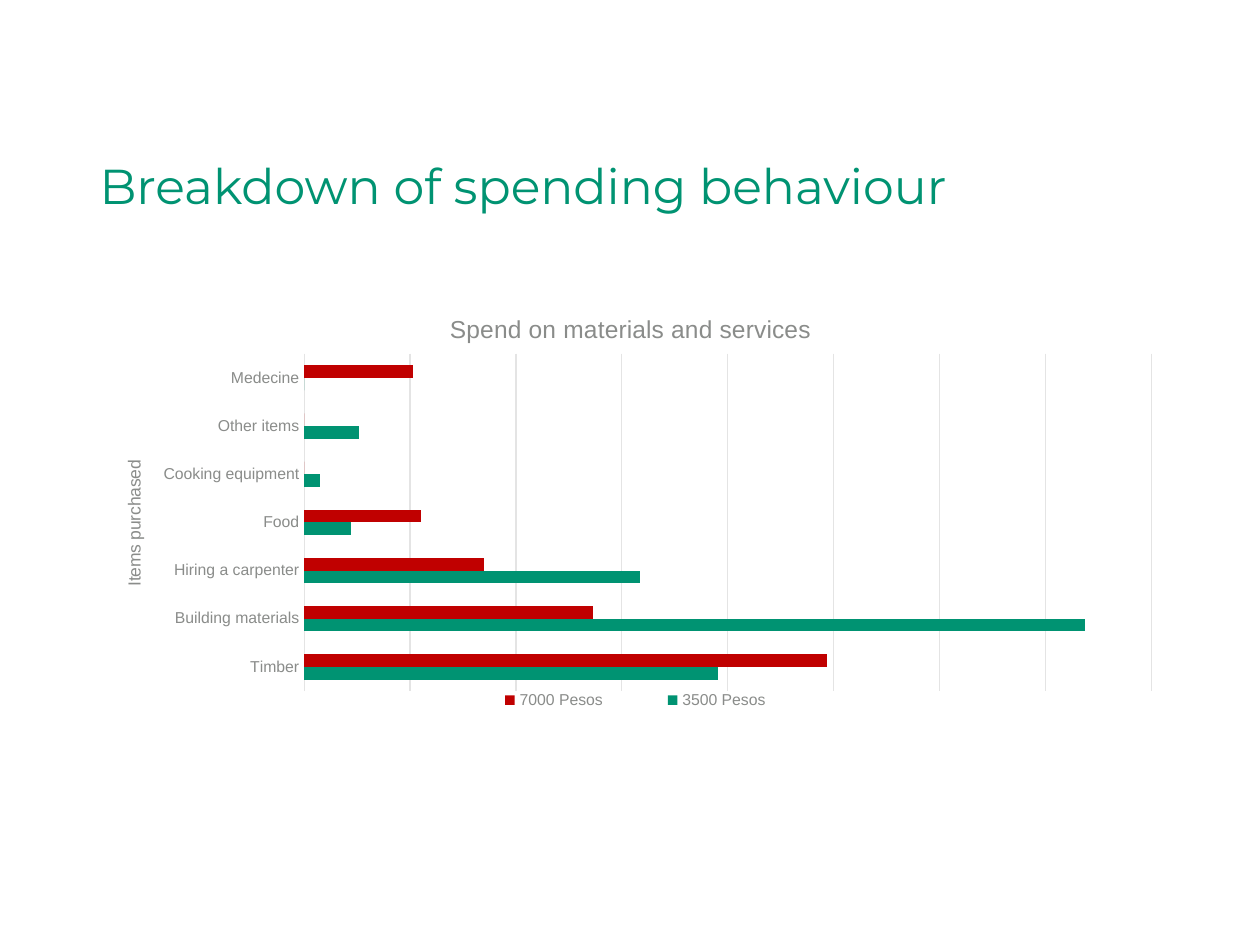
import pptx
import pptx.chart.data
import pptx.dml.color
import pptx.enum.chart
import pptx.enum.text
import pptx.oxml
import pptx.oxml.ns
import pptx.util
from dataclasses import dataclass


@dataclass(frozen=True)
class Theme:
    green: str = "009372"
    red: str = "C00000"
    grey: str = "8A8C8A"
    rule: str = "E4E4E4"
    heading_font: str = "Montserrat"
    chart_font: str = "Arial"
    heading_size: int = 28
    chart_title_size: int = 14
    axis_title_size: int = 10
    label_size: int = 9


THEME = Theme()
WIDTH, HEIGHT = pptx.util.Inches(10), pptx.util.Inches(7.5)
MARGIN = 0.069  # share of the slide's width
GRID_STEP, GRID_COLUMNS = 13.56, 8

ITEMS = ["Timber", "Building materials", "Hiring a carpenter", "Food",
         "Cooking equipment", "Other items", "Medecine"]
SPENDING = [
    ("3500 Pesos", [53, 100, 43, 6, 2, 7, 0], THEME.green),
    ("7000 Pesos", [67, 37, 23, 15, 0, 0, 14], THEME.red),
]


def rgb(value):
    return pptx.dml.color.RGBColor.from_string(value)


def style_font(font, name, size, color):
    font.name = name
    font.size = pptx.util.Pt(size)
    font.bold = False
    font.color.rgb = rgb(color)


def style_rule(line):
    line.color.rgb = rgb(THEME.rule)
    line.width = pptx.util.Pt(0.75)


def band(top, height):
    """Left, top, width and height of a band between the side margins."""
    return (int(WIDTH * MARGIN), int(HEIGHT * top),
            int(WIDTH * (1 - 2 * MARGIN)), int(HEIGHT * height))


def place(element, after, inner=False, **shares):
    """Fix a chart part's position, in shares of the chart's size."""
    for old in element.findall(pptx.oxml.ns.qn("c:layout")):
        element.remove(old)
    target = '<c:layoutTarget val="inner"/>' if inner else ""
    modes = "".join(f'<c:{key}Mode val="edge"/>' for key in "xy")
    sizes = "".join(f'<c:{key} val="{share}"/>' for key, share in shares.items())
    layout = pptx.oxml.parse_xml(
        f'<c:layout {pptx.oxml.ns.nsdecls("c")}><c:manualLayout>'
        f"{target}{modes}{sizes}</c:manualLayout></c:layout>")
    before = element.find(pptx.oxml.ns.qn(after)) if after else None
    if before is None:
        element.insert(0, layout)
    else:
        before.addnext(layout)


def add_heading(slide, text):
    heading = slide.shapes.title
    heading.left, heading.top, heading.width, heading.height = band(0.165, 0.115)
    frame = heading.text_frame
    frame.text = text
    frame.word_wrap = True
    frame.vertical_anchor = pptx.enum.text.MSO_ANCHOR.TOP
    paragraph = frame.paragraphs[0]
    paragraph.alignment = pptx.enum.text.PP_ALIGN.LEFT
    paragraph.line_spacing = 0.9
    style_font(paragraph.font, THEME.heading_font, THEME.heading_size, THEME.green)


def add_title(owner, text, size, x, y):
    """Title a chart or an axis."""
    owner.has_title = True
    title = owner.chart_title if hasattr(owner, "chart_title") else owner.axis_title
    title.text_frame.text = text
    style_font(title.text_frame.paragraphs[0].font, THEME.chart_font, size, THEME.grey)
    place(title.text_frame._txBody.getparent().getparent(), "c:tx", x=x, y=y)


def style_axes(chart):
    items, amounts = chart.category_axis, chart.value_axis
    items.major_tick_mark = pptx.enum.chart.XL_TICK_MARK.NONE
    style_font(items.tick_labels.font, THEME.chart_font, THEME.label_size, THEME.grey)
    style_rule(items.format.line)
    amounts.visible = False
    amounts.minimum_scale = 0
    amounts.maximum_scale = GRID_STEP * GRID_COLUMNS
    amounts.major_unit = GRID_STEP
    amounts.has_major_gridlines = True
    style_rule(amounts.major_gridlines.format.line)


def add_legend(chart):
    chart.has_legend = True
    legend = chart.legend
    legend.position = pptx.enum.chart.XL_LEGEND_POSITION.BOTTOM
    legend.include_in_layout = False
    style_font(legend.font, THEME.chart_font, THEME.label_size, THEME.grey)
    place(legend._element, "c:legendPos", x=0.33, y=0.89, w=0.35, h=0.06)


def add_spending_chart(slide):
    data = pptx.chart.data.CategoryChartData(number_format="#,##0")
    data.categories = ITEMS
    for name, amounts, _ in SPENDING:
        data.add_series(name, amounts)
    chart = slide.shapes.add_chart(
        pptx.enum.chart.XL_CHART_TYPE.BAR_CLUSTERED, *band(0.303, 0.476), data).chart
    style_font(chart.font, THEME.chart_font, THEME.axis_title_size, THEME.grey)

    # Bars
    bars = chart.plots[0]
    bars.gap_width = 182
    bars.overlap = 0
    bars.vary_by_categories = False
    for series, (_, _, color) in zip(bars.series, SPENDING):
        series.format.fill.solid()
        series.format.fill.fore_color.rgb = rgb(color)
        series.invert_if_negative = False

    # Axes, titles and legend
    style_axes(chart)
    add_title(chart, "Spend on materials and services",
              THEME.chart_title_size, x=0.33, y=0.05)
    add_title(chart.category_axis, "Items purchased",
              THEME.axis_title_size, x=0.03, y=0.38)
    add_legend(chart)
    plot_area = chart._chartSpace.chart.plotArea
    place(plot_area, None, inner=True, x=0.2, y=0.15, w=0.78, h=0.75)


def main():
    deck = pptx.Presentation()
    deck.slide_width, deck.slide_height = WIDTH, HEIGHT
    slide = deck.slides.add_slide(deck.slide_layouts.get_by_name("Title Only"))
    add_heading(slide, "Breakdown of spending behaviour")
    add_spending_chart(slide)
    deck.save("out.pptx")


if __name__ == "__main__":
    main()
